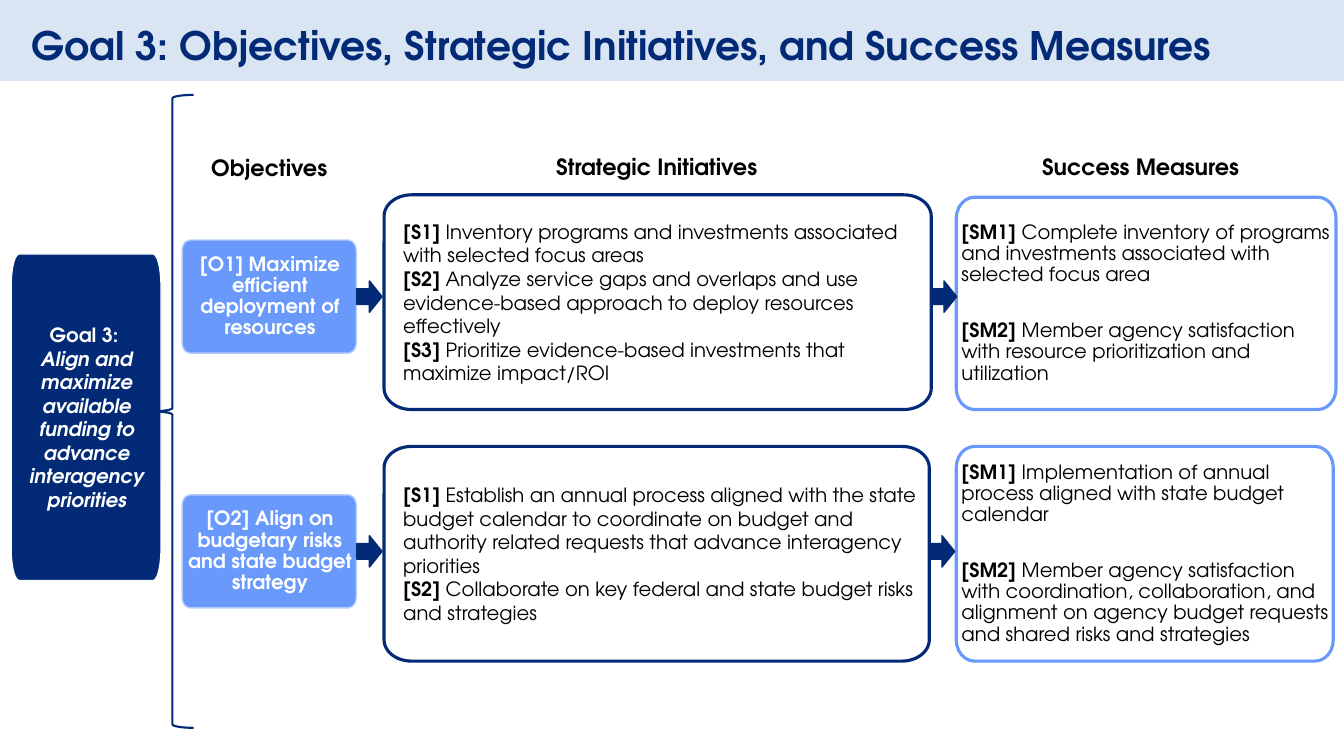
from lxml import etree
from pptx import Presentation
from pptx.dml.color import RGBColor
from pptx.enum.shapes import MSO_SHAPE
from pptx.enum.text import MSO_ANCHOR, MSO_AUTO_SIZE, PP_ALIGN
from pptx.oxml.ns import qn
from pptx.util import Cm, Pt

TITLE = "Goal 3: Objectives, Strategic Initiatives, and Success Measures"
GOAL = ("Goal 3: ",
        "Align and maximize available funding to advance interagency priorities")
# text, left, top, width
HEADINGS = [
    ("Objectives", 4.59, 3.76, 4.39),
    ("Strategic Initiatives", 9.68, 3.73, 13.74),
    ("Success Measures", 24.06, 3.73, 9.37),
]
# "box" entries are left, top, width, height in cm
ROWS = [
    {
        "objective": "[O1] Maximize efficient deployment of resources",
        "objective_box": (4.59, 6.05, 4.39, 2.85),
        "initiatives": [
            ("[S1] ", "Inventory programs and investments associated with "
                      "selected focus areas"),
            ("[S2] ", "Analyze service gaps and overlaps and use evidence-based "
                      "approach to deploy resources effectively"),
            ("[S3] ", "Prioritize evidence-based investments that maximize "
                      "impact/ROI"),
        ],
        "initiatives_box": (9.68, 4.91, 13.79, 5.41),
        "measures": [
            ("[SM1] ", "Complete inventory of programs and investments "
                       "associated with selected focus area"),
            ("[SM2] ", "Member agency satisfaction with resource "
                       "prioritization and utilization"),
        ],
        "measures_box": (24.1, 4.97, 9.57, 5.35),
    },
    {
        "objective": "[O2] Align on budgetary risks and state budget strategy",
        "objective_box": (4.59, 12.47, 4.39, 2.85),
        "initiatives": [
            ("[S1] ", "Establish an annual process aligned with the state budget "
                      "calendar to coordinate on budget and authority related "
                      "requests that advance interagency priorities"),
            ("[S2] ", "Collaborate on key federal and state budget risks and "
                      "strategies"),
        ],
        "initiatives_box": (9.68, 11.25, 13.74, 5.41),
        "measures": [
            ("[SM1] ", "Implementation of annual process aligned with state "
                       "budget calendar"),
            ("[SM2] ", "Member agency satisfaction with coordination, "
                       "collaboration, and alignment on agency budget requests "
                       "and shared risks and strategies"),
        ],
        "measures_box": (24.1, 11.25, 9.5, 5.41),
    },
]
FONT = "TeX Gyre Adventor"
NAVY, BLUE, PALE, BAND = "032A77", "6899FB", "B3CCFD", "D9E5F3"
WHITE, BLACK = "FFFFFF", "000000"
ARROW_W, ARROW_H = 0.64, 0.79
QUARTER_TURN = 90 * 60000


def rgb(color):
    return RGBColor.from_string(color)


def paint(sp, fill, line, width=1):
    sp.shadow.inherit = False
    if fill:
        sp.fill.solid()
        sp.fill.fore_color.rgb = rgb(fill)
    else:
        sp.fill.background()
    sp.line.color.rgb = rgb(line)
    sp.line.width = Pt(width)


def add_preset(kind, box, fill, line, width=1):
    sp = slide.shapes.add_shape(kind, *map(Cm, box))
    paint(sp, fill, line, width)
    return sp


def add_panel(box, rx, ry, fill, line, width=1):
    """Box with elliptical corners whose text area spans the whole box."""
    x, y, w, h = box
    right, bottom = x + w, y + h
    points = [(Cm(px), Cm(py)) for px, py in (
        (x, y + ry), (x + rx, y), (right - rx, y), (right, y + ry),
        (right, bottom - ry), (right - rx, bottom),
        (x + rx, bottom), (x, bottom - ry))]
    builder = slide.shapes.build_freeform(*points[0])
    builder.add_line_segments(points[1:], close=True)
    sp = builder.convert_to_shape()
    # every other segment cuts a corner: turn it into a quarter arc
    corners = list(sp._element.iter(qn("a:lnTo")))[:7:2]
    for i, corner in enumerate(corners):
        arc = etree.Element(qn("a:arcTo"), wR=str(Cm(rx)), hR=str(Cm(ry)),
                            stAng=str((i + 2) % 4 * QUARTER_TURN),
                            swAng=str(QUARTER_TURN))
        corner.getparent().replace(corner, arc)
    paint(sp, fill, line, width)
    tf = sp.text_frame
    tf.word_wrap = True
    tf.vertical_anchor = MSO_ANCHOR.MIDDLE
    tf.margin_left = tf.margin_top = tf.margin_bottom = Cm(0.13)
    tf.margin_right = Cm(0.09)
    return sp


def write(tf, paragraphs, size, color, align=PP_ALIGN.LEFT, spacing=1, gap=0):
    """Each paragraph is a list of (text, bold, italic) runs."""
    for i, runs in enumerate(paragraphs):
        p = tf.add_paragraph() if i else tf.paragraphs[0]
        p.alignment, p.line_spacing = align, spacing
        p.space_before = Pt(gap if i else 0)
        for text, bold, italic in runs:
            r = p.add_run()
            r.text = text
            r.font.name, r.font.size = FONT, Pt(size)
            r.font.bold, r.font.italic = bold, italic
            r.font.color.rgb = rgb(color)


def labelled(items):
    return [[(label, True, False), (text, False, False)] for label, text in items]


def add_arrow(left, middle):
    add_preset(MSO_SHAPE.RIGHT_ARROW,
               (left, middle - ARROW_H / 2, ARROW_W, ARROW_H), NAVY, NAVY)


prs = Presentation()
prs.slide_width, prs.slide_height = Cm(33.87), Cm(19.05)
slide = prs.slides.add_slide(prs.slide_layouts[5])

band = add_preset(MSO_SHAPE.RECTANGLE, (0, 0, 33.87, 2.03), BAND, BAND)
slide.shapes._spTree.insert(2, band._element)  # behind the title

title = slide.shapes.title
title.left, title.top, title.width, title.height = map(Cm, (0.55, 0.26, 30.78, 1.6))
tf = title.text_frame
tf.auto_size = MSO_AUTO_SIZE.NONE
tf.vertical_anchor = MSO_ANCHOR.BOTTOM
write(tf, [[(TITLE, True, False)]], 28, NAVY, spacing=0.9)

for text, left, top, width in HEADINGS:
    tf = slide.shapes.add_textbox(*map(Cm, (left, top, width, 0.94))).text_frame
    tf.word_wrap = True
    write(tf, [[(text, True, False)]], 16, BLACK, PP_ALIGN.CENTER)

for row in ROWS:
    x, y, w, h = row["objective_box"]
    sp = add_panel(row["objective_box"], 0.2, 0.28, BLUE, PALE)
    write(sp.text_frame, [[(row["objective"], True, False)]], 14, WHITE,
          PP_ALIGN.CENTER, 0.9)

    sp = add_panel(row["measures_box"], 0.46, 0.53, None, BLUE, 2.25)
    write(sp.text_frame, labelled(row["measures"]), 14, BLACK,
          spacing=0.9, gap=25)

    sp = add_panel(row["initiatives_box"], 0.69, 0.54, None, NAVY, 2.25)
    sp.text_frame.margin_left = Cm(0.48)
    write(sp.text_frame, labelled(row["initiatives"]), 14, BLACK)

    add_arrow(x + w + 0.01, y + h / 2)
    add_arrow(row["initiatives_box"][0] + row["initiatives_box"][2], y + h / 2)

goal = add_panel((0.28, 6.4, 3.78, 8.23), 0.2, 0.82, NAVY, WHITE)
write(goal.text_frame, [[(GOAL[0], True, False)], [(GOAL[1], True, True)]],
      14, WHITE, PP_ALIGN.CENTER)

brace = add_preset(MSO_SHAPE.RIGHT_BRACE, (3.81, 2.39, 1.07, 15.95), None, NAVY, 1.5)
brace.rotation = 180
brace.adjustments[0], brace.adjustments[1] = 0.08, 0.5

prs.save("out.pptx")
